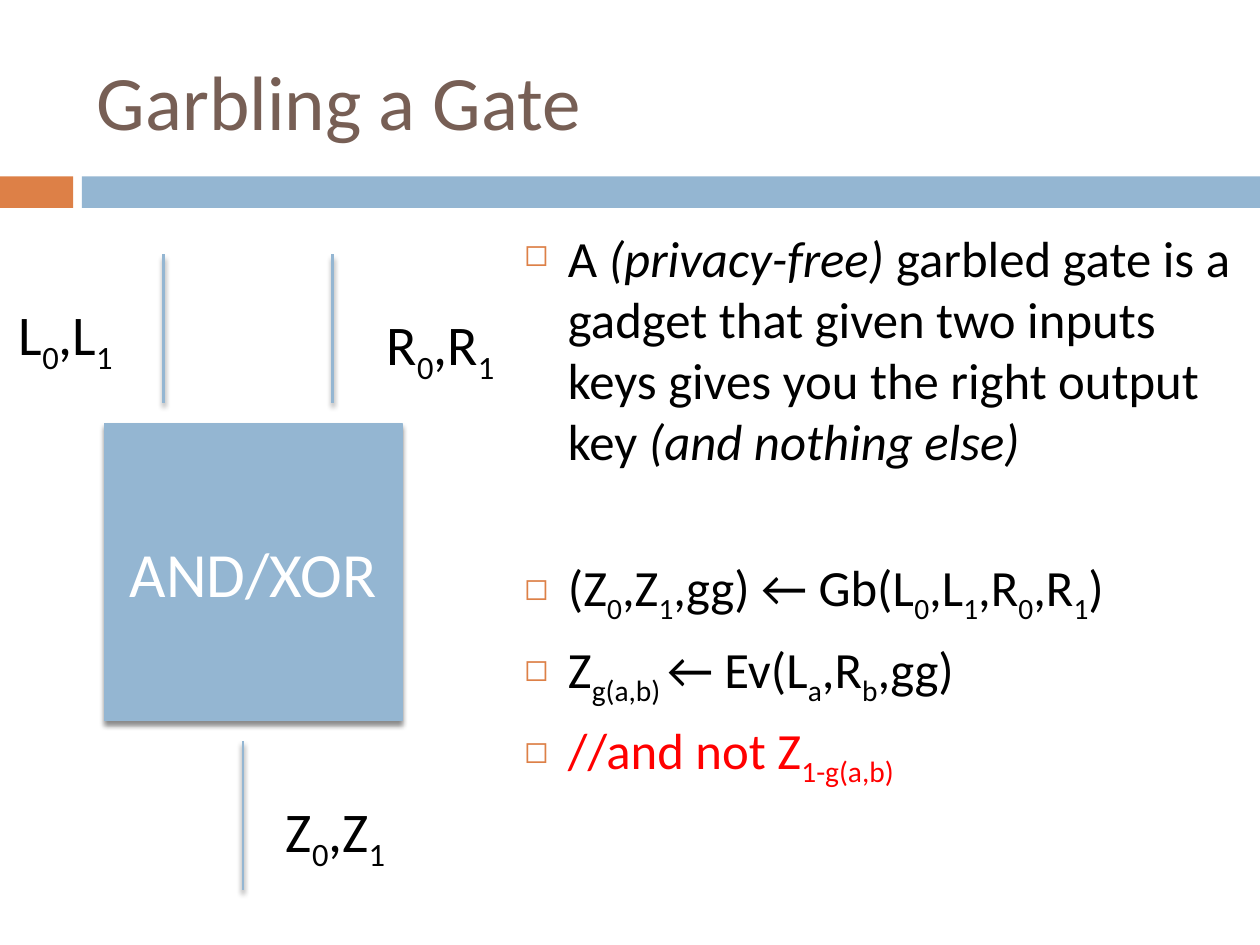
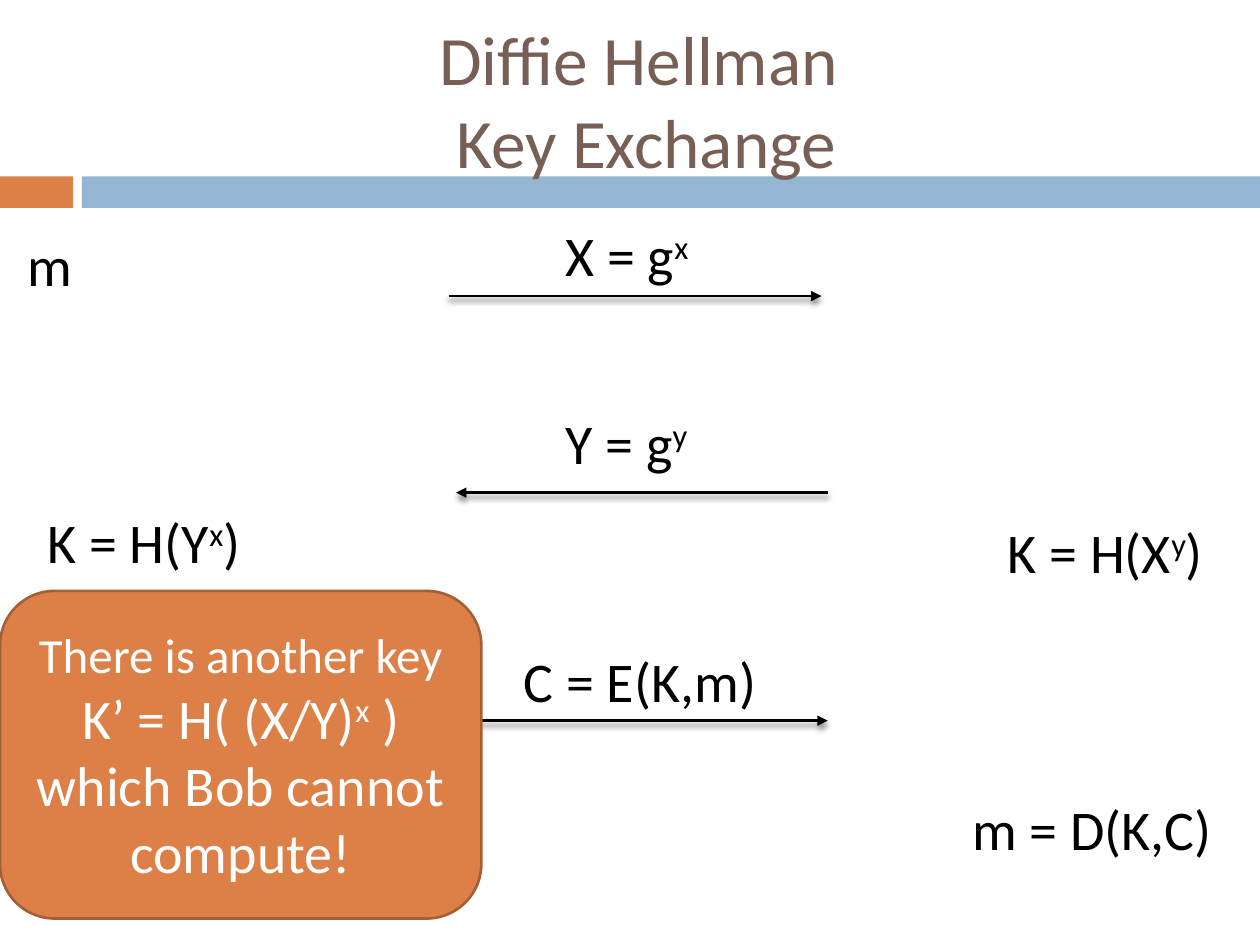
from dataclasses import dataclass

from lxml import etree
from pptx import Presentation
from pptx.dml.color import RGBColor
from pptx.enum import shapes, text
from pptx.oxml import ns
from pptx.util import Inches, Pt


@dataclass(frozen=True)
class Theme:
    font: str = "Calibri"
    blue: str = "94B6D2"
    orange: str = "DD8047"
    rust: str = "A35F35"
    brown: str = "775F55"
    black: str = "000000"
    white: str = "FFFFFF"
    red: str = "FF0000"
    title: float = 44
    title_small: float = 39.6
    gate: float = 36
    label: float = 32
    body: float = 29
    note: float = 28
    line: float = 1.5


T = Theme()
SUB = {"baseline": "-25000"}
SUP = {"baseline": "30000"}
ITALIC = {"i": "1"}
RECT = shapes.MSO_SHAPE.RECTANGLE
ROUNDED = shapes.MSO_SHAPE.ROUNDED_RECTANGLE
MIDDLE = text.MSO_ANCHOR.MIDDLE
CENTER = text.PP_ALIGN.CENTER


def inches(*values):
    return [Inches(v) for v in values]


def rgb(color):
    return RGBColor.from_string(color)


def child(parent, tag, **attrs):
    el = etree.SubElement(parent, ns.qn(tag))
    for name, value in attrs.items():
        el.set(name, str(value))
    return el


def set_shadow(sp):
    effects = child(sp._element.spPr, "a:effectLst")
    shadow = child(effects, "a:outerShdw", blurRad=Pt(3), dist=Pt(2.4),
                   dir=5400000, rotWithShape=0)
    child(child(shadow, "a:srgbClr", val=T.black), "a:alpha", val=45000)


def write(p, content, size, color, mark=SUB, **paragraph):
    """Fill a paragraph; parts between tildes get the mark's attributes."""
    for name, value in paragraph.items():
        setattr(p, name, value)
    for i, part in enumerate(content.split("~")):
        for j, line in enumerate(part.split("\n")):
            if j:
                p.add_line_break()
            if not line:
                continue
            r = p.add_run()
            r.text = line
            for name, value in {"name": T.font, "size": Pt(size)}.items():
                setattr(r.font, name, value)
            r.font.color.rgb = rgb(color)
            if i % 2:
                for name, value in mark.items():
                    r._r.get_or_add_rPr().set(name, value)


def add_box(s, kind, box, fill, line=None, width=T.line):
    sp = s.shapes.add_shape(kind, *inches(*box))
    sp.fill.solid()
    sp.fill.fore_color.rgb = rgb(fill)
    if line:
        sp.line.color.rgb = rgb(line)
        sp.line.width = Pt(width)
    else:
        sp.line.fill.background()
    tf = sp.text_frame
    tf.word_wrap, tf.vertical_anchor = True, MIDDLE
    return sp


def add_line(parent, start, end, color, arrow=False):
    cx = parent.shapes.add_connector(shapes.MSO_CONNECTOR.STRAIGHT,
                                     *inches(*start, *end))
    cx.line.color.rgb = rgb(color)
    cx.line.width = Pt(T.line)
    if arrow:
        child(cx.line._get_or_add_ln(), "a:tailEnd", type="triangle")
    set_shadow(cx)


def add_label(parent, box, content, mark=SUB):
    tf = parent.shapes.add_textbox(*inches(*box, 0.64)).text_frame
    tf.word_wrap, tf.auto_size = False, text.MSO_AUTO_SIZE.SHAPE_TO_FIT_TEXT
    write(tf.paragraphs[0], content, T.label, T.black, mark)


def titled_slide(prs, title, size, **paragraph):
    s = prs.slides.add_slide(prs.slide_layouts[6])
    for left, width, color in ((0, 0.58, T.orange), (0.65, 9.35, T.blue)):
        add_box(s, RECT, (left, 1.4, width, 0.25), color).shadow.inherit = False
    tf = s.shapes.add_textbox(*inches(0.67, 0.25, 8.92, 1.08)).text_frame
    tf.word_wrap, tf.vertical_anchor = True, MIDDLE
    write(tf.paragraphs[0], title, size, T.brown, **paragraph)
    return s


def draw_gate(s, x, y, side):
    """Draw the gate square with its two input wires and one output wire."""
    wire, gap = side / 2, 0.16
    gate = add_box(s, RECT, (x, y, side, side), T.blue, T.blue, 0.79)
    set_shadow(gate)
    write(gate.text_frame.paragraphs[0], "AND/XOR", T.gate, T.white,
          alignment=CENTER)
    for dx, top in ((0.47, y - gap - wire), (1.81, y - gap - wire),
                    (1.1, y + side + gap)):
        add_line(s, (x + dx, top), (x + dx, top + wire), T.blue)
    for dx, dy, width, keys in ((-0.78, -1.03, 0.98, "L~0~,L~1~"),
                                (2.14, -0.95, 1.08, "R~0~,R~1~"),
                                (1.34, 2.91, 1.08, "Z~0~,Z~1~")):
        add_label(s, (x + dx, y + dy, width), keys)


def add_bullets(s, box, items):
    tf = s.shapes.add_textbox(*inches(*box)).text_frame
    tf.word_wrap = True
    for i, (content, color, mark, before) in enumerate(items):
        p = tf.add_paragraph() if i else tf.paragraphs[0]
        write(p, content, T.body, color, mark, space_before=Pt(before))
        pPr = p._p.get_or_add_pPr()
        pPr.set("marL", str(Inches(0.35)))
        pPr.set("indent", str(-Inches(0.35)))
        child(child(pPr, "a:buClr"), "a:srgbClr", val=T.orange)
        child(pPr, "a:buSzPct", val=60000)
        child(pPr, "a:buChar", char="◻")


def add_message(s, label_box, content, left, y, width, to_left=False):
    group = s.shapes.add_group_shape()
    add_label(group, label_box, content, SUP)
    ends = [(left, y), (left + width, y)]
    add_line(group, *(ends[::-1] if to_left else ends), T.black, arrow=True)


def add_callout(s, box, lines):
    sp = add_box(s, ROUNDED, box, T.orange, T.rust)
    sp.shadow.inherit = False
    tf = sp.text_frame
    for i, (content, size) in enumerate(lines):
        p = tf.add_paragraph() if i else tf.paragraphs[0]
        write(p, content, size, T.white, SUP, alignment=CENTER)


def garbling_slide(prs):
    s = titled_slide(prs, "Garbling a Gate", T.title)
    draw_gate(s, 0.83, 3.36, 2.36)
    add_bullets(s, (4.06, 1.75, 5.94, 5.75), [
        ("A ~(privacy-free) ~garbled gate is a gadget that given two inputs "
         "keys gives you the right output key ~(and nothing else)~",
         T.black, ITALIC, 7),
        ("(Z~0~,Z~1~,gg) ← Gb(L~0~,L~1~,R~0~,R~1~)", T.black, SUB, 49),
        ("Z~g(a,b) ~← Ev(L~a~,R~b~,gg)", T.black, SUB, 7),
        ("//and not Z~1-g(a,b)~", T.red, SUB, 7),
    ])


def key_exchange_slide(prs):
    s = titled_slide(prs, "Diffie Hellman \nKey Exchange", T.title_small,
                     alignment=CENTER)
    add_message(s, (4.39, 1.7, 1.39), "X = g~x~", 3.56, 2.35, 2.96)
    add_message(s, (4.39, 3.19, 1.39), "Y = g~y~", 3.62, 3.91, 2.95, True)
    add_message(s, (4.06, 5.08, 2.11), "C = E(K,m)", 3.62, 5.72, 2.95)
    for box, content in (((0.12, 1.78, 0.5), "m"),
                         ((0.28, 3.98, 1.91), "K = H(Y~x~)"),
                         ((7.9, 4.06, 1.91), "K = H(X~y~)"),
                         ((7.62, 6.26, 2.18), "m = D(K,C)")):
        add_label(s, box, content, SUP)
    add_callout(s, (0, 4.69, 3.82, 2.6), [
        ("There is another key", T.note),
        ("K’ = H( (X/Y)~x~ )", T.label),
        ("which Bob cannot compute!", T.label),
    ])


def main():
    prs = Presentation()
    prs.slide_width, prs.slide_height = inches(10, 7.5)
    garbling_slide(prs)
    key_exchange_slide(prs)
    prs.save("out.pptx")


if __name__ == "__main__":
    main()
